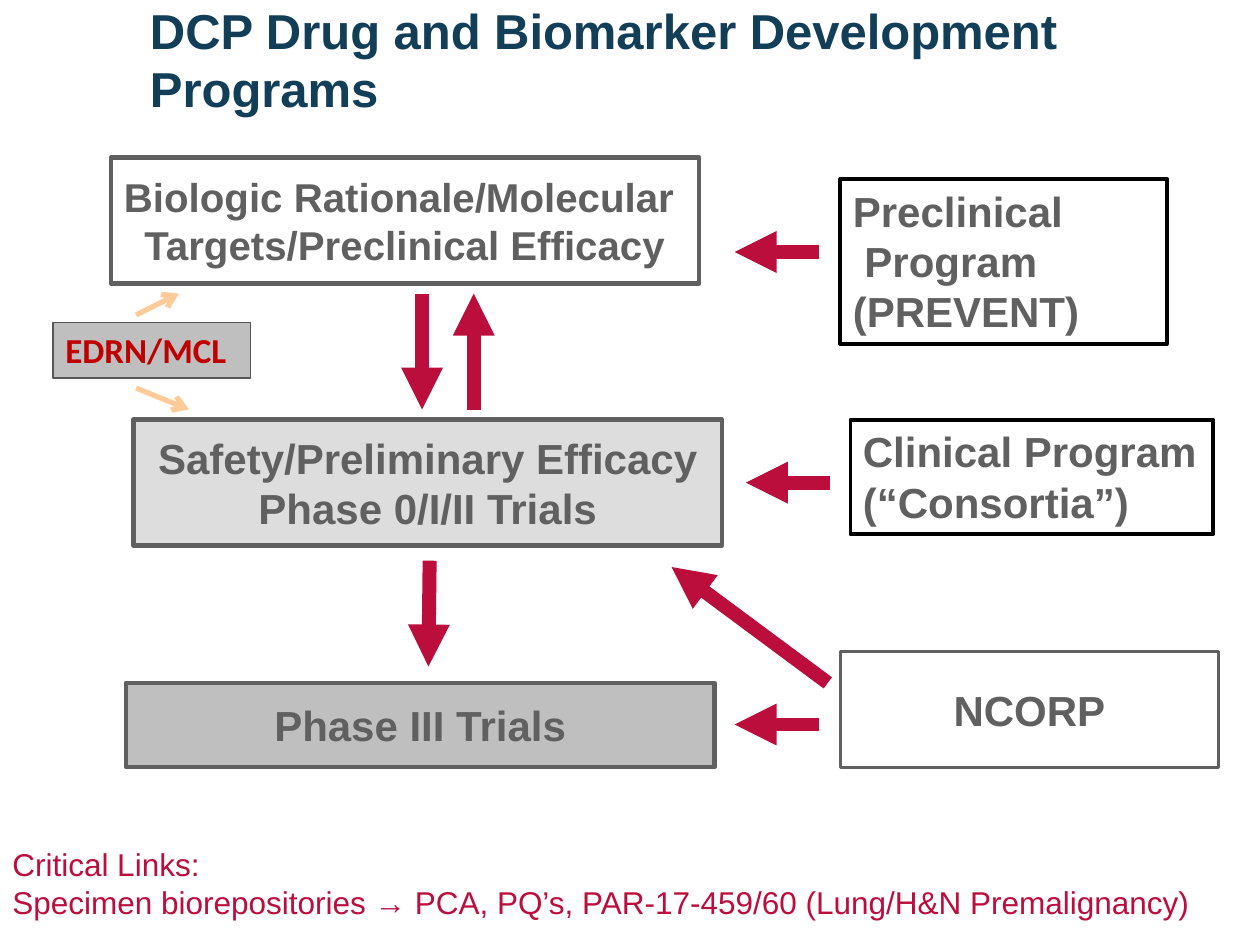
from lxml.etree import SubElement
from pptx import Presentation
from pptx.dml.color import RGBColor
from pptx.enum.shapes import MSO_CONNECTOR as Conn, MSO_SHAPE as Shape
from pptx.enum.text import MSO_ANCHOR as Anchor, MSO_AUTO_SIZE as Auto, PP_ALIGN as Align
from pptx.oxml.ns import qn
from pptx.util import Inches, Pt

GREY, RED, PEACH, BLACK = "606060", "BB0E3D", "FFCC99", "000000"


def color(fmt, tone):
    fmt.rgb = RGBColor.from_string(tone)


def write(frame, lines, size, tone, bold=True, font="Arial", align=Align.LEFT):
    frame.text = "\n".join(lines)
    for para in frame.paragraphs:
        para.alignment = align
        for run in para.runs:
            run.font.name, run.font.size, run.font.bold = font, Pt(size), bold
            color(run.font.color, tone)


def add_title(slide, text):
    title = slide.shapes.title
    title.left, title.top = Inches(1.19), Inches(0)
    title.width, title.height = Inches(8.81), Inches(1.25)
    frame = title.text_frame
    write(frame, [text], 28, "123E57")
    frame.margin_left = frame.margin_right = frame.margin_top = frame.margin_bottom = 0
    frame.vertical_anchor = Anchor.TOP
    frame.word_wrap = True
    frame.auto_size = Auto.NONE


def add_box(slide, area, lines, fill=None, line=GREY, width=2.5, size=24,
            tone=GREY, font="Arial", mid=True, wrap=False):
    box = slide.shapes.add_shape(Shape.RECTANGLE, *map(Inches, area))
    box.shadow.inherit = False
    if fill:
        box.fill.solid()
        color(box.fill.fore_color, fill)
    else:
        box.fill.background()
    color(box.line.color, line)
    box.line.width = Pt(width)
    frame = box.text_frame
    write(frame, lines, size, tone, font=font, align=Align.CENTER if mid else Align.LEFT)
    frame.word_wrap = wrap
    frame.vertical_anchor = Anchor.MIDDLE if mid else Anchor.TOP
    frame.auto_size = Auto.NONE if mid else Auto.SHAPE_TO_FIT_TEXT


def add_arrow(slide, ends, tone=RED, width=8, head="triangle"):
    arrow = slide.shapes.add_connector(Conn.STRAIGHT, *map(Inches, ends))
    color(arrow.line.color, tone)
    arrow.line.width = Pt(width)
    SubElement(arrow.line._get_or_add_ln(), qn("a:tailEnd"), type=head)
    SubElement(arrow._element.spPr, qn("a:effectLst"))


def add_note(slide, area, lines):
    note = slide.shapes.add_textbox(*map(Inches, area))
    write(note.text_frame, lines, 18, RED, bold=False)
    note.text_frame.word_wrap = False
    note.text_frame.auto_size = Auto.SHAPE_TO_FIT_TEXT


def main():
    deck = Presentation()
    deck.slide_width, deck.slide_height = Inches(10), Inches(7.5)
    slide = deck.slides.add_slide(deck.slide_layouts[5])
    add_title(slide, "DCP Drug and Biomarker Development Programs")

    # Development stages
    add_box(slide, (0.88, 1.25, 4.67, 1),
            ["Biologic Rationale/Molecular ", "Targets/Preclinical Efficacy"],
            fill="FFFFFF", size=23)
    add_box(slide, (1.06, 3.33, 4.67, 1),
            ["Safety/Preliminary Efficacy", "Phase 0/I/II Trials"], fill="DDDDDD")
    add_box(slide, (1, 5.42, 4.67, 0.67), ["Phase III Trials"], fill="BFBFBF")

    # Supporting programs
    add_box(slide, (6.67, 1.42, 2.59, 1.31), ["Preclinical", " Program (PREVENT)"],
            line=BLACK, width=2.25, mid=False, wrap=True)
    add_box(slide, (6.75, 3.33, 2.88, 0.91), ["Clinical Program", "(“Consortia”)"],
            line=BLACK, width=2.25, mid=False)
    add_box(slide, (6.67, 5.17, 3, 0.92), ["NCORP"], width=2)
    add_box(slide, (0.42, 2.56, 1.57, 0.44), ["EDRN/MCL"], fill="BFBFBF", line="565656",
            width=0.75, size=20, tone="C00000", font="Calibri", mid=False, wrap=True)

    # Arrows between stages
    for ends in ((3.35, 2.33, 3.35, 3.25), (3.76, 3.25, 3.76, 2.33),
                 (3.41, 4.45, 3.4, 5.29)):
        add_arrow(slide, ends)

    # Arrows from programs to stages
    for left, y in ((5.83, 2), (5.92, 3.83), (5.83, 5.75)):
        add_arrow(slide, (left + 0.67, y, left, y))
    add_arrow(slide, (6.57, 5.42, 5.33, 4.5))

    # Thin arrows from EDRN/MCL
    for ends in ((1.08, 2.5, 1.42, 2.33), (1.08, 3.08, 1.5, 3.25)):
        add_arrow(slide, ends, PEACH, 3, "arrow")

    # Links at the foot
    add_note(slide, (0, 6.66, 9.77, 0.71),
             ["Critical Links:",
              "Specimen biorepositories → PCA, PQ’s, PAR-17-459/60 (Lung/H&N Premalignancy)"])
    deck.save("out.pptx")


if __name__ == "__main__":
    main()
